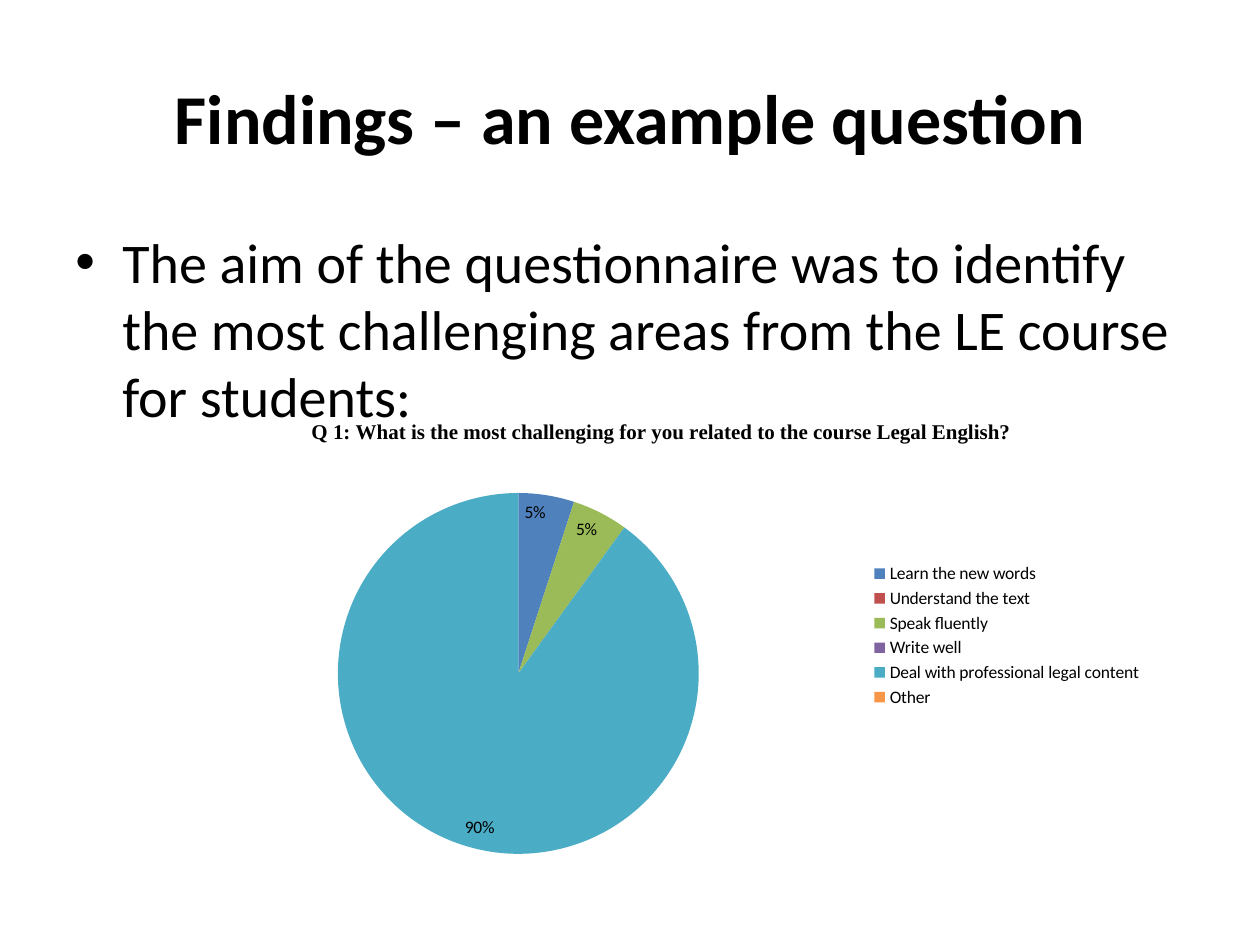
import lxml.etree
import pptx
import pptx.chart.data
import pptx.dml.color
import pptx.enum.chart
import pptx.enum.text
import pptx.oxml
import pptx.oxml.ns
import pptx.util

PX = 914400 // 126  # EMU per pixel

THEME = {
    "body_font": "Calibri",
    "chart_title_font": "Times New Roman",
    "text": "000000",
    "slices": ["4F81BD", "C0504D", "9BBB59", "8064A2", "4BACC6", "F79646"],
    "title_size": 40,
    "body_size": 32,
    "chart_title_size": 12,
    "chart_size": 10,
}

ANSWERS = {
    "Learn the new words": 5,
    "Understand the text": 0,
    "Speak fluently": 5,
    "Write well": 0,
    "Deal with professional legal content": 90,
    "Other": 0,
}

CHART_BOX = (168, 399, 987, 473)
PIE_BOX = (338, 493, 361, 361)


def box(*lengths):
    return [length * PX for length in lengths]


def set_attributes(target, values):
    for name, value in values.items():
        setattr(target, name, value)


def style_font(font, size, name=THEME["body_font"], bold=False):
    set_attributes(font, {"name": name, "size": pptx.util.Pt(size), "bold": bold})
    font.color.rgb = pptx.dml.color.RGBColor.from_string(THEME["text"])


def add_text(slide, place, text, size, frame_format, paragraph_format, bold=False):
    frame = slide.shapes.add_textbox(*box(*place)).text_frame
    set_attributes(frame, {"word_wrap": True, **frame_format})
    paragraph = frame.paragraphs[0]
    set_attributes(paragraph, paragraph_format)
    run = paragraph.add_run()
    run.text = text
    style_font(run.font, size, bold=bold)
    return paragraph


def add_bullet(paragraph, indent):
    properties = paragraph._p.get_or_add_pPr()
    properties.set("marL", str(indent * PX))
    properties.set("indent", str(-indent * PX))
    for tag, name, value in (("a:buFont", "typeface", "Arial"), ("a:buChar", "char", "•")):
        element = lxml.etree.SubElement(properties, pptx.oxml.ns.qn(tag))
        element.set(name, value)


def place_pie(chart):
    """Fix the pie's own square inside the chart frame."""
    left, top, width, height = CHART_BOX
    fractions = {
        "x": (PIE_BOX[0] - left) / width,
        "y": (PIE_BOX[1] - top) / height,
        "w": PIE_BOX[2] / width,
        "h": PIE_BOX[3] / height,
    }
    plot_area = chart._chartSpace.chart.plotArea
    for old in plot_area.findall(pptx.oxml.ns.qn("c:layout")):
        plot_area.remove(old)
    settings = '<c:layoutTarget val="inner"/><c:xMode val="edge"/><c:yMode val="edge"/>'
    settings += "".join(f'<c:{key} val="{value:.3f}"/>' for key, value in fractions.items())
    plot_area.insert(0, pptx.oxml.parse_xml(
        f'<c:layout {pptx.oxml.ns.nsdecls("c")}><c:manualLayout>{settings}'
        "</c:manualLayout></c:layout>"))


def label_slices(plot):
    plot.has_data_labels = True
    labels = plot.data_labels
    set_attributes(labels, {
        "show_percentage": True,
        "show_value": False,
        "number_format": "0%",
        "number_format_is_linked": False,
        "position": pptx.enum.chart.XL_LABEL_POSITION.INSIDE_END,
    })
    style_font(labels.font, THEME["chart_size"])
    # Empty slices carry no label
    empty = [index for index, value in enumerate(ANSWERS.values()) if value == 0]
    for place, index in enumerate(empty):
        labels._element.insert(place, pptx.oxml.parse_xml(
            f'<c:dLbl {pptx.oxml.ns.nsdecls("c")}><c:idx val="{index}"/>'
            '<c:delete val="1"/></c:dLbl>'))
    # Labels belong to the series
    series = plot.series[0]._element
    series.find(pptx.oxml.ns.qn("c:cat")).addprevious(labels._element)


def add_pie(slide, title):
    data = pptx.chart.data.CategoryChartData()
    data.categories = list(ANSWERS)
    data.add_series("Series 1", list(ANSWERS.values()))
    chart = slide.shapes.add_chart(
        pptx.enum.chart.XL_CHART_TYPE.PIE, *box(*CHART_BOX), data).chart
    style_font(chart.font, THEME["chart_size"])

    # Title and legend
    set_attributes(chart, {"has_title": True, "has_legend": True})
    chart.chart_title.include_in_layout = False
    run = chart.chart_title.text_frame.paragraphs[0].add_run()
    run.text = title
    style_font(run.font, THEME["chart_title_size"], THEME["chart_title_font"], True)
    set_attributes(chart.legend, {
        "position": pptx.enum.chart.XL_LEGEND_POSITION.RIGHT,
        "include_in_layout": False,
    })
    style_font(chart.legend.font, THEME["chart_size"])

    # Slices
    plot = chart.plots[0]
    plot.vary_by_categories = True
    for index, color in enumerate(THEME["slices"]):
        fill = plot.series[0].points[index].format.fill
        fill.solid()
        fill.fore_color.rgb = pptx.dml.color.RGBColor.from_string(color)
    label_slices(plot)
    place_pie(chart)


def main():
    presentation = pptx.Presentation()
    set_attributes(presentation, {
        "slide_width": pptx.util.Inches(10), "slide_height": pptx.util.Inches(7.5)})
    slide = presentation.slides.add_slide(presentation.slide_layouts[6])

    # Heading
    add_text(slide, (63, 38, 1134, 158), "Findings – an example question",
             THEME["title_size"],
             {"vertical_anchor": pptx.enum.text.MSO_ANCHOR.MIDDLE},
             {"alignment": pptx.enum.text.PP_ALIGN.CENTER}, bold=True)

    # Aim of the questionnaire
    aim = add_text(slide, (63, 221, 1134, 624),
                   "The aim of the questionnaire was to identify the most challenging "
                   "areas from the LE course for students:",
                   THEME["body_size"],
                   {"vertical_anchor": pptx.enum.text.MSO_ANCHOR.TOP},
                   {"space_before": pptx.util.Pt(6.4)})
    add_bullet(aim, 47)

    # Answers to the example question
    add_pie(slide, "Q 1: What is the most challenging for you related to the course "
                   "Legal English?")
    presentation.save("out.pptx")


if __name__ == "__main__":
    main()
